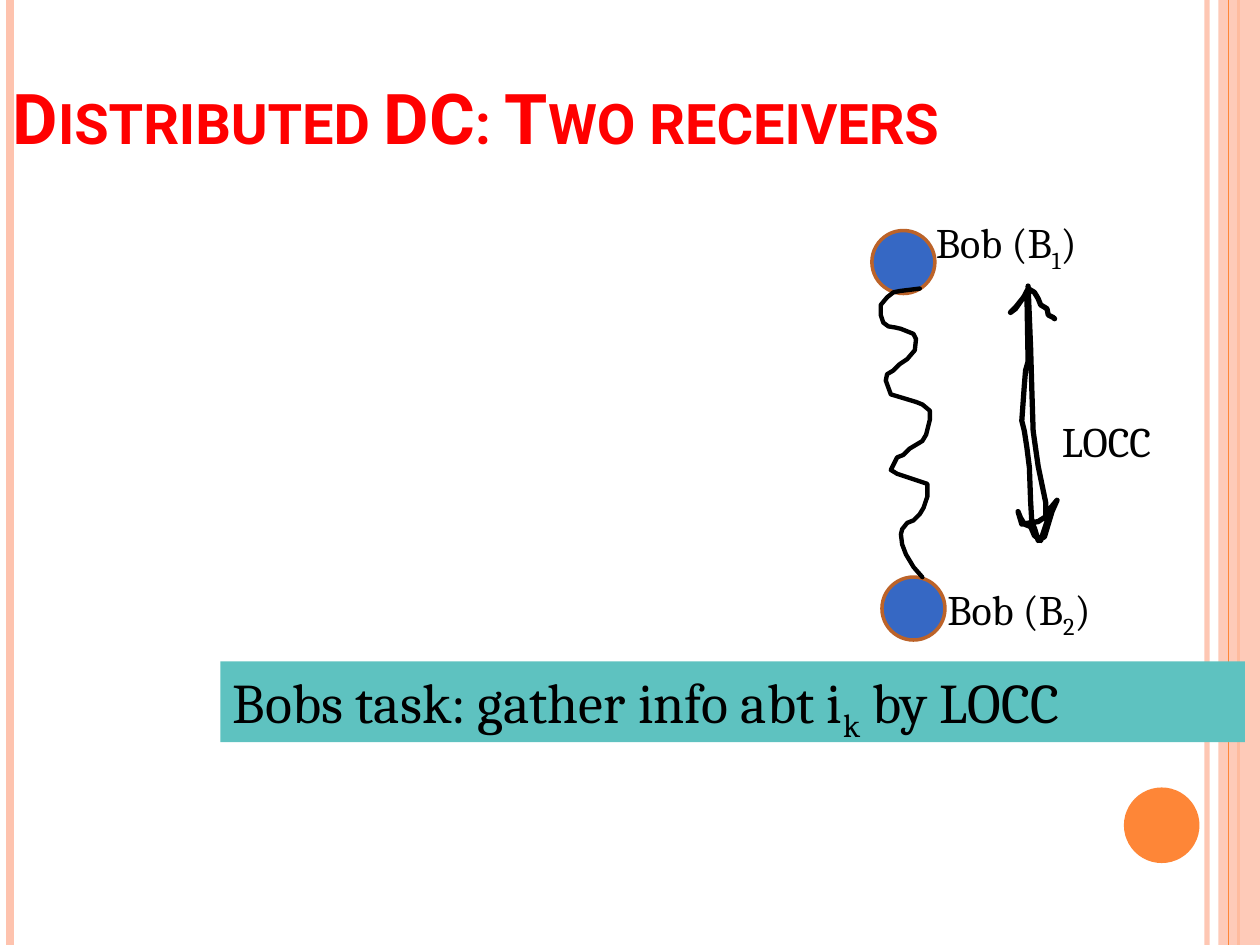
"""Build the slide on distributed dense coding with two receivers."""

from lxml.etree import SubElement
from pptx import Presentation
from pptx.dml.color import RGBColor
from pptx.enum.shapes import MSO_CONNECTOR, MSO_SHAPE
from pptx.enum.text import MSO_ANCHOR, MSO_AUTO_SIZE, PP_ALIGN
from pptx.oxml.ns import qn
from pptx.util import Inches, Pt

BLACK = RGBColor(0x00, 0x00, 0x00)
RED = RGBColor(0xFF, 0x00, 0x00)
PEACH = RGBColor(0xFE, 0xC3, 0xAE)
ORANGE = RGBColor(0xFE, 0x86, 0x37)
BLUE = RGBColor(0x36, 0x68, 0xC4)
BROWN = RGBColor(0xBC, 0x63, 0x29)
TEAL = RGBColor(0x5E, 0xC2, 0xC0)

WIDTH, HEIGHT = 10, 7.5
TITLE = "Distributed DC: Two receivers"
TASK = ["Bobs task: gather info abt i", "k", " by LOCC"]
LABELS = [
    (["Bob (B", "1", ")"], (7.33, 1.67, 1.67, 0.5), True),
    (["Bob (B", "2", ")"], (7.42, 4.58, 1.67, 0.5), True),
    (["LOCC"], (8.33, 3.25, 1.17, 0.5), False),
]
RECEIVERS = [(7, 4.58), (6.92, 1.83)]
RECEIVER_SIZE = 0.5
OUTER_RULES = [(9.58, PEACH, 3, 93), (0.08, PEACH, 4.5, 100), (9.83, ORANGE, 1.5, 100)]
INNER_RULES = [(9.75, ORANGE, 0.75, 100)]

ENTANGLEMENT = [
    (7.3, 2.29), (7.14, 2.31), (7.09, 2.32), (7.04, 2.36), (6.99, 2.42), (6.99, 2.5),
    (7.01, 2.56), (7.05, 2.59), (7.11, 2.6), (7.15, 2.61), (7.25, 2.65), (7.27, 2.69),
    (7.26, 2.78), (7.2, 2.85), (7.14, 2.89), (7.09, 2.94), (7.04, 2.97), (7.03, 3.02),
    (7.07, 3.13), (7.17, 3.16), (7.27, 3.19), (7.32, 3.21), (7.38, 3.26), (7.38, 3.33),
    (7.35, 3.45), (7.32, 3.5), (7.22, 3.56), (7.17, 3.61), (7.12, 3.63), (7.07, 3.73),
    (7.12, 3.76), (7.27, 3.81), (7.36, 3.84), (7.36, 3.94), (7.33, 4.03), (7.3, 4.08),
    (7.25, 4.13), (7.2, 4.15), (7.16, 4.2), (7.15, 4.24), (7.16, 4.32), (7.19, 4.4),
    (7.25, 4.5), (7.32, 4.58),
]
LOCC_ARROW = [
    (8.16, 2.27), (8.18, 2.76), (8.19, 3.1), (8.2, 3.42), (8.24, 3.7), (8.3, 3.99),
    (8.3, 4.1), (8.24, 4.14), (8.11, 4.16), (8.08, 4.06), (8.1, 4.11), (8.13, 4.16),
    (8.18, 4.18), (8.21, 4.25), (8.26, 4.29), (8.32, 4.11), (8.34, 4.03), (8.39, 3.97),
    (8.35, 4.06), (8.29, 4.26), (8.24, 4.29), (8.21, 4.19), (8.19, 4.15), (8.18, 3.98),
    (8.17, 3.71), (8.15, 3.55), (8.13, 3.42), (8.11, 3.34), (8.13, 3.06), (8.14, 2.94),
    (8.16, 2.87), (8.15, 2.31), (8.13, 2.35), (8.06, 2.45), (8.02, 2.48), (8.06, 2.44),
    (8.1, 2.39), (8.14, 2.34), (8.16, 2.29), (8.21, 2.32), (8.24, 2.37), (8.26, 2.42),
    (8.31, 2.45), (8.32, 2.5), (8.36, 2.52), (8.37, 2.53),
]


def inches(values):
    return [Inches(value) for value in values]


def set_opacity(shape, percent):
    color = shape.element.find(".//" + qn("a:srgbClr"))
    SubElement(color, qn("a:alpha")).set("val", str(percent * 1000))


def write_text(shape, parts, size=24, font="Cambria", color=BLACK, bold=False,
               small_caps=False, wrap=True, anchor=MSO_ANCHOR.TOP,
               auto_size=MSO_AUTO_SIZE.SHAPE_TO_FIT_TEXT):
    """Write the parts as runs, with every second one as a subscript."""
    frame = shape.text_frame
    frame.word_wrap = wrap
    frame.auto_size = auto_size
    frame.vertical_anchor = anchor
    paragraph = frame.paragraphs[0]
    paragraph.alignment = PP_ALIGN.LEFT
    for part in parts:
        run = paragraph.add_run()
        run.text = part
        run.font.size = Pt(size)
        run.font.name = font
        run.font.bold = bold
        run.font.color.rgb = color
    for index, properties in enumerate(shape.element.iter(qn("a:rPr"))):
        if index % 2:
            properties.set("baseline", "-25000")
        if small_caps:
            properties.set("cap", "small")


def add_filled(slide, kind, box, fill, line=None):
    shape = slide.shapes.add_shape(kind, *inches(box))
    shape.shadow.inherit = False
    shape.fill.solid()
    shape.fill.fore_color.rgb = fill
    if line is None:
        shape.line.fill.background()
    else:
        shape.line.color.rgb = line
        shape.line.width = Pt(2)
    return shape


def add_rules(slide, rules):
    for x, color, width, opacity in rules:
        rule = slide.shapes.add_connector(
            MSO_CONNECTOR.STRAIGHT, *inches((x, 0, x, HEIGHT)))
        rule.line.color.rgb = color
        rule.line.width = Pt(width)
        SubElement(rule.element.spPr, qn("a:effectLst"))
        if opacity < 100:
            set_opacity(rule, opacity)


def add_stroke(slide, points, width):
    start, *rest = [inches(point) for point in points]
    builder = slide.shapes.build_freeform(*start)
    builder.add_line_segments(rest, close=False)
    stroke = builder.convert_to_shape()
    stroke.shadow.inherit = False
    stroke.fill.background()
    stroke.line.color.rgb = BLACK
    stroke.line.width = Pt(width)
    stroke.get_or_add_ln().set("cap", "rnd")


def add_title(slide):
    title = slide.shapes.title
    title.left, title.top, title.width, title.height = inches((0, 0, WIDTH, 1.31))
    write_text(title, [TITLE], size=40, font="Roboto", color=RED, bold=True,
               small_caps=True, anchor=MSO_ANCHOR.BOTTOM, auto_size=MSO_AUTO_SIZE.NONE)
    title.element.getparent().append(title.element)


def main():
    presentation = Presentation()
    presentation.slide_width, presentation.slide_height = inches((WIDTH, HEIGHT))
    slide = presentation.slides.add_slide(presentation.slide_layouts[5])

    add_rules(slide, OUTER_RULES)
    band = add_filled(slide, MSO_SHAPE.RECTANGLE, (9.67, 0, 0.33, HEIGHT), PEACH)
    set_opacity(band, 87)
    add_rules(slide, INNER_RULES)
    add_filled(slide, MSO_SHAPE.OVAL, (8.92, 6.25, 0.6, 0.6), ORANGE)
    add_title(slide)

    for left, top in RECEIVERS:
        add_filled(slide, MSO_SHAPE.OVAL,
                   (left, top, RECEIVER_SIZE, RECEIVER_SIZE), BLUE, line=BROWN)
    add_stroke(slide, ENTANGLEMENT, 2.5)
    task = add_filled(slide, MSO_SHAPE.RECTANGLE, (1.75, 5.25, 8.13, 0.64), TEAL)
    write_text(task, TASK, size=32, wrap=False)
    add_stroke(slide, LOCC_ARROW, 3)
    for parts, box, wrap in LABELS:
        write_text(slide.shapes.add_textbox(*inches(box)), parts, wrap=wrap)

    presentation.save("out.pptx")


if __name__ == "__main__":
    main()
